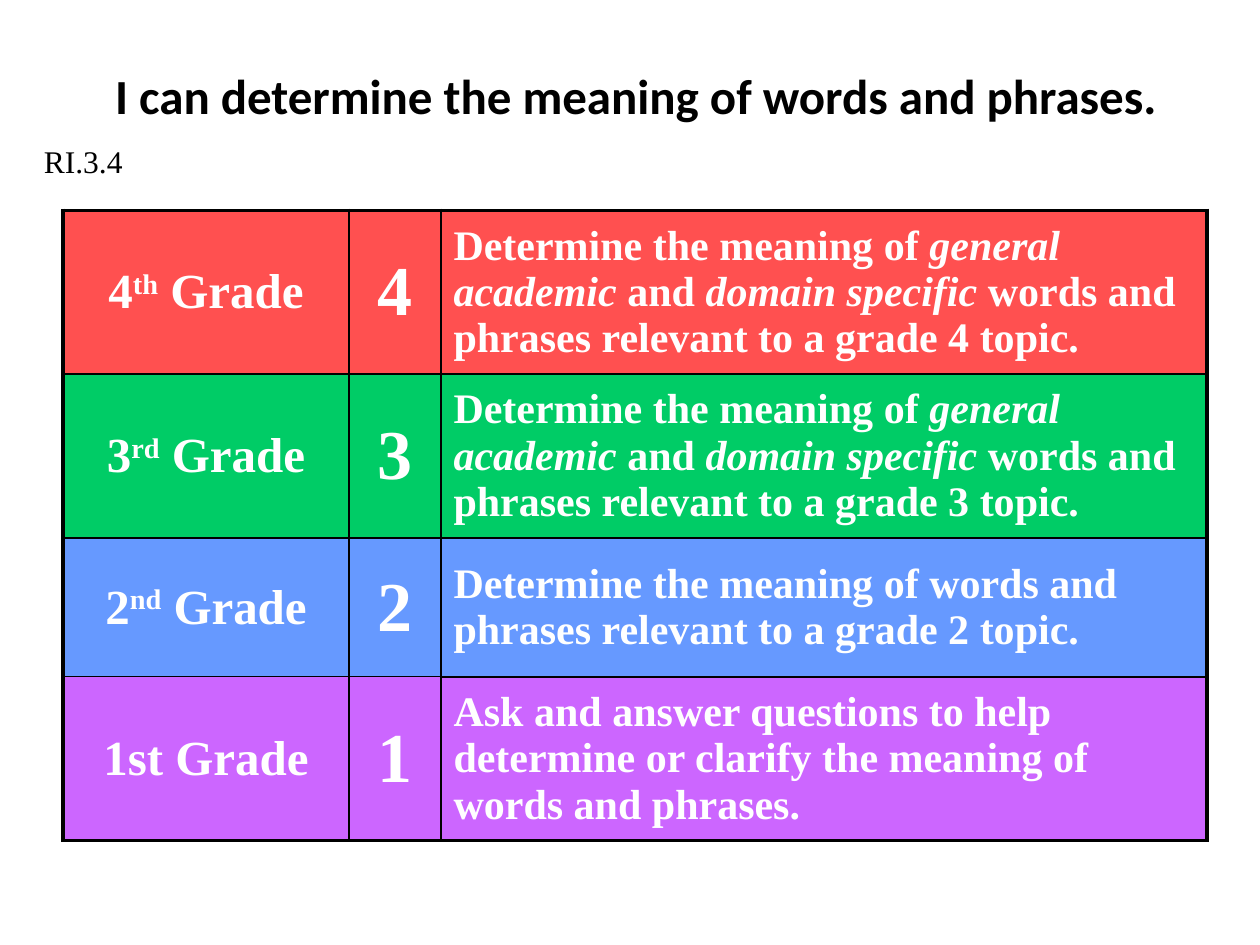
from dataclasses import dataclass
from lxml.etree import SubElement
from pptx import Presentation
from pptx.dml.color import RGBColor
from pptx.enum.text import MSO_ANCHOR, PP_ALIGN
from pptx.oxml.ns import qn
from pptx.util import Inches, Pt


@dataclass(frozen=True)
class Theme:
    ink: str = "000000"
    paper: str = "FFFFFF"
    bands: tuple = ("FF5050", "00CC66", "6699FF", "CC66FF")
    head: str = "Calibri"
    body: str = "Times New Roman"
    title: int = 28
    code: int = 18
    sizes: tuple = (28, 40, 24)  # grade, score, goal


THEME = Theme()
WIDE, HIGH = 10, 7.5

# Column widths, row heights and rule weights of the scale
COLS = (2.27, 0.73, 6.08)
ROWS = (1.1, 1.27, 1.1, 1.1)
UPRIGHT = (2.25, 1, 1, 2.25)
LEVEL = (2.25, 1.5, 1, 1, 1.5)
GOAL_LEVEL = (2.25, 1.5, 1.5, 1.5, 1.5)


def topic(grade):
    return [("Determine the meaning of ", ""), ("general academic", "i"),
            (" and ", ""), ("domain specific ", "i"),
            (f"words and phrases relevant to a grade {grade} topic.", "")]


# Each row: grade, score, goal; every cell is a list of (text, style) runs
SCALE = [
    ([("4", ""), ("th", "sup"), (" Grade", "")], [("4", "")], topic(4)),
    ([("3", ""), ("rd", "sup"), (" Grade", "")], [("3", "")], topic(3)),
    ([("2", ""), ("nd", "sup"), (" Grade", "")], [("2", "")],
     [("Determine the meaning of words and phrases relevant to a grade 2 topic.", "")]),
    ([("1st Grade", "")], [("1", "")],
     [("Ask and answer questions to help determine or clarify "
       "the meaning of words and phrases.", "")]),
]


def write(para, runs, face, size, color, bold=False):
    for text, style in runs:
        run = para.add_run()
        run.text = text
        font = run.font
        font.name, font.size, font.bold = face, Pt(size), bold
        font.color.rgb = RGBColor.from_string(color)
        if style == "i":
            font.italic = True
        elif style == "sup":
            run._r.get_or_add_rPr().set("baseline", "30000")


def label(slide, box, text, face, size, bold=False, align=PP_ALIGN.LEFT,
          anchor=MSO_ANCHOR.TOP):
    frame = slide.shapes.add_textbox(*map(Inches, box)).text_frame
    frame.word_wrap = True
    frame.vertical_anchor = anchor
    para = frame.paragraphs[0]
    para.alignment = align
    write(para, [(text, "")], face, size, THEME.ink, bold)


def rule(cell, side, weight):
    props = cell._tc.get_or_add_tcPr()
    line = SubElement(props, qn(f"a:ln{side}"), w=str(Pt(weight)))
    fill = SubElement(line, qn("a:solidFill"))
    SubElement(fill, qn("a:srgbClr"), val=THEME.ink)


def scale(slide, box):
    table = slide.shapes.add_table(len(ROWS), len(COLS), *map(Inches, box)).table
    table.first_row = table.horz_banding = False
    for col, width in zip(table.columns, COLS):
        col.width = Inches(width)
    for row, height in zip(table.rows, ROWS):
        row.height = Inches(height)

    for r, cells in enumerate(SCALE):
        for c, runs in enumerate(cells):
            cell = table.cell(r, c)
            goal = c == len(COLS) - 1
            # Borders come before the fill in the cell's properties
            level = GOAL_LEVEL if goal else LEVEL
            weights = (UPRIGHT[c], UPRIGHT[c + 1], level[r], level[r + 1])
            for side, weight in zip("LRTB", weights):
                rule(cell, side, weight)
            cell.fill.solid()
            cell.fill.fore_color.rgb = RGBColor.from_string(THEME.bands[r])
            cell.vertical_anchor = MSO_ANCHOR.MIDDLE
            para = cell.text_frame.paragraphs[0]
            para.alignment = PP_ALIGN.LEFT if goal else PP_ALIGN.CENTER
            write(para, runs, THEME.body, THEME.sizes[c], THEME.paper, True)


def main():
    deck = Presentation()
    deck.slide_width, deck.slide_height = Inches(WIDE), Inches(HIGH)
    slide = deck.slides.add_slide(deck.slide_layouts[6])

    # Title
    label(slide, (0.42, 0.25, 9.25, 1),
          "I can determine the meaning of words and phrases.",
          THEME.head, THEME.title, True, PP_ALIGN.CENTER, MSO_ANCHOR.MIDDLE)
    # Grade scale
    scale(slide, (0.5, 1.67, sum(COLS), sum(ROWS)))
    # Standard code
    label(slide, (0.25, 1.08, 1.42, 0.4), "RI.3.4", THEME.body, THEME.code)

    deck.save("out.pptx")


if __name__ == "__main__":
    main()
